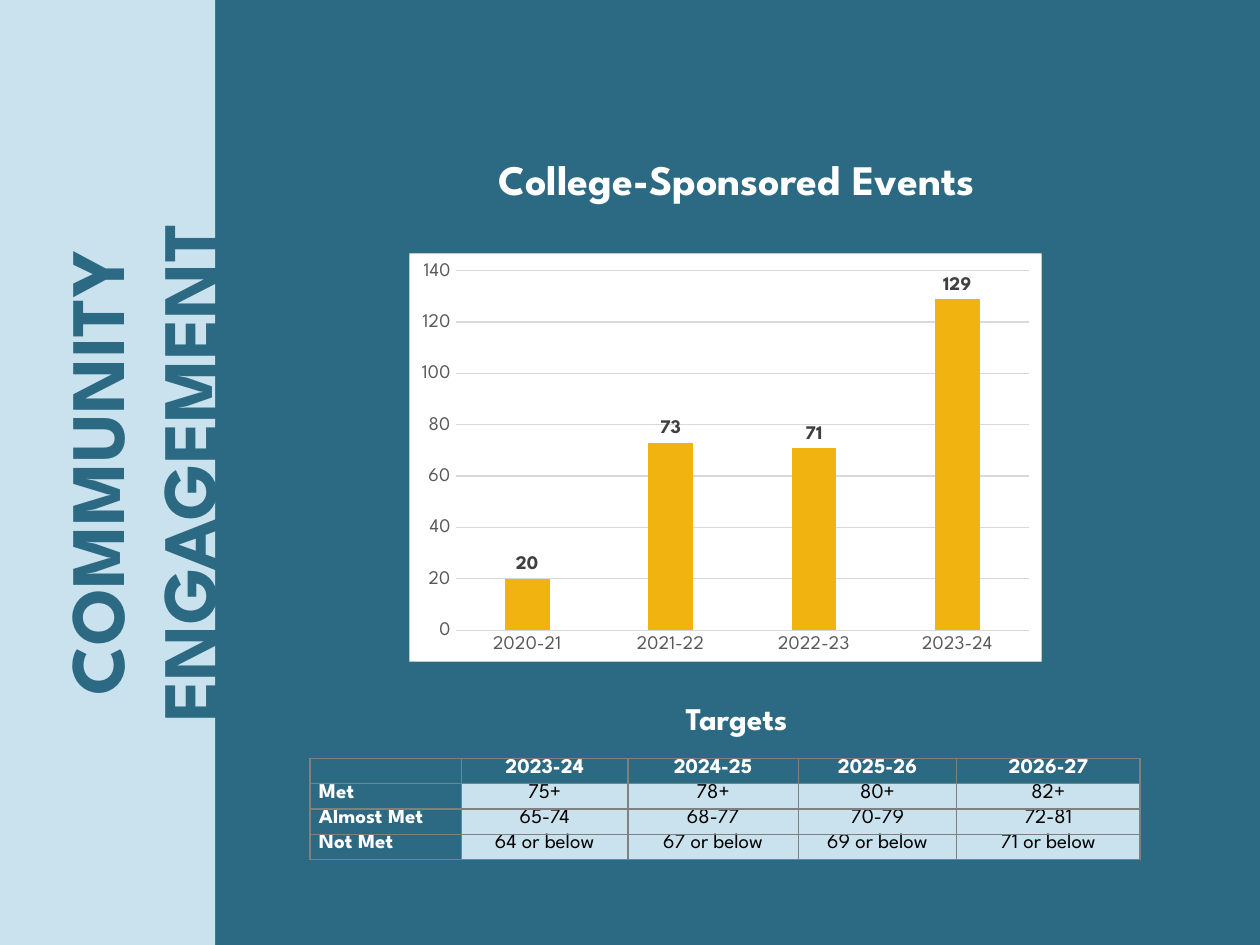
from lxml.etree import SubElement
from pptx import Presentation
from pptx.chart.data import CategoryChartData
from pptx.dml.color import RGBColor
from pptx.enum.chart import XL_CHART_TYPE as ChartType
from pptx.enum.chart import XL_LABEL_POSITION as LabelPosition
from pptx.enum.chart import XL_TICK_MARK as TickMark
from pptx.enum.shapes import MSO_SHAPE as Shape
from pptx.enum.text import PP_ALIGN as Align
from pptx.oxml import parse_xml
from pptx.oxml.ns import nsdecls, qn
from pptx.util import Cm, Pt

FONT = "League Spartan"
TEAL, PALE, GOLD, WHITE, BLACK = "2C6983", "C9E2ED", "F0B310", "FFFFFF", "000000"
GRID, BORDER, AXIS_TEXT, LABEL_TEXT = "D9D9D9", "808080", "595959", "404040"

EVENTS = {"2020-21": 20, "2021-22": 73, "2022-23": 71, "2023-24": 129}
TARGETS = [
    ["", "2023-24", "2024-25", "2025-26", "2026-27"],
    ["Met", "75+", "78+", "80+", "82+"],
    ["Almost Met", "65-74", "68-77", "70-79", "72-81"],
    ["Not Met", "64 or below", "67 or below", "69 or below", "71 or below"],
]
COLUMN_WIDTHS = [3.05, 3.36, 3.43, 3.2, 3.69]


def color(value):
    return RGBColor.from_string(value)


def style_font(font, size, value, bold=False):
    font.name = FONT
    font.size = Pt(size)
    font.bold = bold
    font.color.rgb = color(value)


def style_line(line, value):
    line.color.rgb = color(value)
    line.width = Pt(0.75)


def add_panel(page, left, top, width, height, fill):
    panel = page.shapes.add_shape(Shape.RECTANGLE, Cm(left), Cm(top), Cm(width), Cm(height))
    panel.shadow.inherit = False
    panel.fill.solid()
    panel.fill.fore_color.rgb = color(fill)
    panel.line.fill.background()


def add_heading(page, left, top, width, height, text, size, value=WHITE):
    box = page.shapes.add_textbox(Cm(left), Cm(top), Cm(width), Cm(height))
    box.text_frame.word_wrap = True
    para = box.text_frame.paragraphs[0]
    para.alignment = Align.CENTER
    span = para.add_run()
    span.text = text
    style_font(span.font, size, value, bold=True)
    return box


def add_sidebar(page, left, top, width, height):
    add_panel(page, left, top, width, height, PALE)
    # The box is as long as the sidebar is high, turned about its centre
    length, depth = height, 4.01
    center_x, center_y = left + 2.84, top + height / 2
    title = add_heading(page, center_x - length / 2, center_y - depth / 2,
                        length, depth, "COMMUNITY ENGAGEMENT", 44, TEAL)
    title.rotation = 270


def add_events_chart(page, left, top, width, height):
    data = CategoryChartData()
    data.categories = list(EVENTS)
    data.add_series("Series 1", list(EVENTS.values()))
    chart = page.shapes.add_chart(ChartType.COLUMN_CLUSTERED, Cm(left), Cm(top),
                                  Cm(width), Cm(height), data).chart
    chart.has_title = False
    chart.has_legend = False
    style_font(chart.font, 11, BLACK)

    # White chart background
    background = parse_xml(
        f'<c:spPr {nsdecls("c", "a")}><a:solidFill><a:srgbClr val="{WHITE}"/></a:solidFill>'
        '<a:ln><a:noFill/></a:ln></c:spPr>')
    chart.element.find(qn("c:chart")).addnext(background)

    # Axes
    for axis in (chart.category_axis, chart.value_axis):
        axis.major_tick_mark = axis.minor_tick_mark = TickMark.NONE
        style_font(axis.tick_labels.font, 11, AXIS_TEXT)
    style_line(chart.category_axis.format.line, GRID)
    values = chart.value_axis
    values.minimum_scale, values.maximum_scale, values.major_unit = 0, 140, 20
    values.format.line.fill.background()
    style_line(values.major_gridlines.format.line, GRID)

    # Columns and their labels
    plot = chart.plots[0]
    plot.vary_by_categories = False
    plot.gap_width, plot.overlap = 219, -27
    series = plot.series[0]
    series.format.fill.solid()
    series.format.fill.fore_color.rgb = color(GOLD)
    labels = series.data_labels
    labels.show_value = True
    labels.position = LabelPosition.OUTSIDE_END
    style_font(labels.font, 11, LABEL_TEXT, bold=True)


def add_borders(cell):
    properties = cell._tc.get_or_add_tcPr()
    for index, side in enumerate(("lnL", "lnR", "lnT", "lnB")):
        properties.insert(index, parse_xml(
            f'<a:{side} {nsdecls("a")} w="{Pt(0.75)}"><a:solidFill>'
            f'<a:srgbClr val="{BORDER}"/></a:solidFill></a:{side}>'))


def fill_cell(cell, text, is_header, align):
    cell.margin_left = cell.margin_right = Cm(0.18)
    cell.margin_top = cell.margin_bottom = 0
    cell.fill.solid()
    cell.fill.fore_color.rgb = color(TEAL if is_header else PALE)
    add_borders(cell)
    para = cell.text_frame.paragraphs[0]
    para.alignment = align
    if text:
        span = para.add_run()
        span.text = text
        style_font(span.font, 12, WHITE if is_header else BLACK, bold=is_header)
    else:
        # Keeps the empty cell from stretching its row
        SubElement(para._p, qn("a:endParaRPr"), sz="1200")


def add_targets_table(page, left, top, height):
    table = page.shapes.add_table(len(TARGETS), len(COLUMN_WIDTHS), Cm(left), Cm(top),
                                  Cm(sum(COLUMN_WIDTHS)), Cm(height)).table
    table.horz_banding = False
    for column, width in zip(table.columns, COLUMN_WIDTHS):
        column.width = Cm(width)
    for row, texts in enumerate(TARGETS):
        table.rows[row].height = Cm(height / len(TARGETS))
        for column, text in enumerate(texts):
            fill_cell(table.cell(row, column), text, row == 0 or column == 0,
                      Align.CENTER if column else Align.LEFT)


def add_content(page, left, top, width, height):
    add_panel(page, left, top, width, height, TEAL)
    add_heading(page, left + 0.79, top + 2.97, 19.43, 1.27, "College-Sponsored Events", 24)
    add_heading(page, left + 5.72, top + 13.97, 9.58, 1.04, "Targets", 18)
    add_targets_table(page, left + 1.91, top + 15.29, 2.03)
    add_events_chart(page, left + 3.91, top + 5.11, 12.75, 8.23)


def main():
    deck = Presentation()
    deck.slide_width, deck.slide_height = Cm(25.4), Cm(19.05)
    page = deck.slides.add_slide(deck.slide_layouts[6])
    sidebar_width = 4.34
    add_content(page, sidebar_width, 0, 25.4 - sidebar_width, 19.05)
    add_sidebar(page, 0, 0, sidebar_width, 19.05)
    deck.save("out.pptx")


if __name__ == "__main__":
    main()
